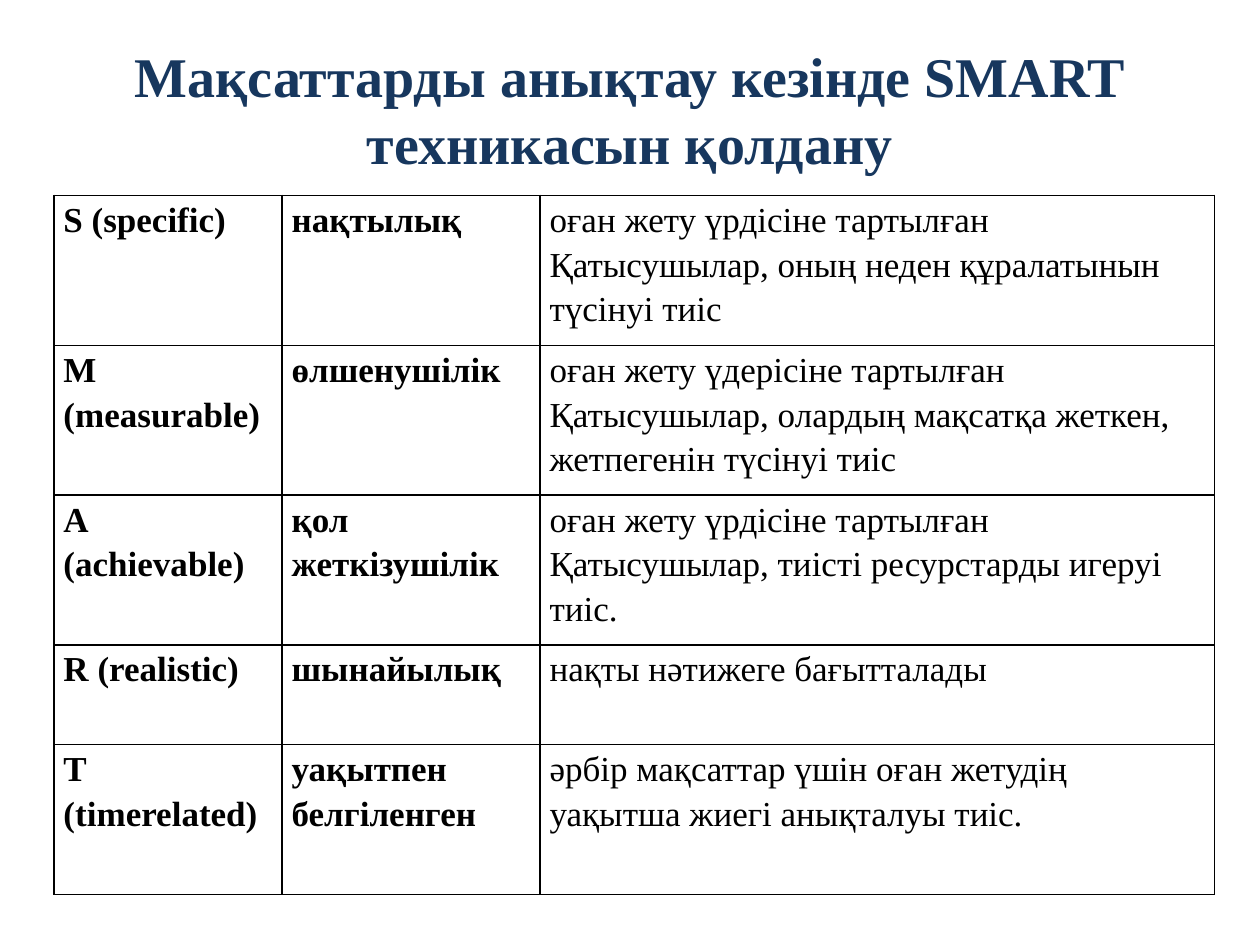
from pptx import Presentation
from pptx.dml.color import RGBColor
from pptx.enum.text import MSO_ANCHOR as Anchor, PP_ALIGN as Align
from pptx.oxml import parse_xml
from pptx.oxml.ns import nsdecls
from pptx.util import Cm, Pt

TITLE = "Мақсаттарды анықтау кезінде SMART техникасын қолдану"
ROWS = [
    ("S (specific)", "нақтылық",
     "оған жету үрдісіне тартылған Қатысушылар, оның неден құралатынын түсінуі тиіс"),
    ("M (measurable)", "өлшенушілік",
     "оған жету үдерісіне тартылған Қатысушылар, олардың мақсатқа жеткен, жетпегенін түсінуі тиіс"),
    ("A (achievable)", "қол жеткізушілік",
     "оған жету үрдісіне тартылған Қатысушылар, тиісті ресурстарды игеруі тиіс."),
    ("R (realistic)", "шынайылық", "нақты нәтижеге бағытталады"),
    ("T (timerelated)", "уақытпен белгіленген",
     "әрбір мақсаттар үшін оған жетудің уақытша жиегі анықталуы тиіс."),
]
COLUMN_WIDTHS = [4.6, 5.2, 13.59]
ROW_HEIGHTS = [3.02, 3.02, 3.02, 2.01, 3.02]


def color(hex_text):
    return RGBColor.from_string(hex_text)


def set_all(target, values):
    for name, value in values.items():
        setattr(target, name, value)


class SlideBuilder:
    font_name = "Times New Roman"
    title_color = "17375E"
    text_color = "000000"
    border_width = Pt(1)
    cell_format = {"margin_left": Cm(0.19), "margin_right": Cm(0.19),
                   "margin_top": 0, "margin_bottom": 0,
                   "vertical_anchor": Anchor.TOP}

    def __init__(self, deck):
        self.page = deck.slides.add_slide(deck.slide_layouts.get_by_name("Title Only"))

    def add_text(self, para, text, size, hex_text, bold, **para_format):
        span = para.add_run()
        span.text = text
        set_all(span.font, {"name": self.font_name, "size": Pt(size), "bold": bold})
        span.font.color.rgb = color(hex_text)
        set_all(para, para_format)

    def title(self, text, left, top, width, height):
        box = self.page.shapes.title
        set_all(box, {"left": Cm(left), "top": Cm(top),
                      "width": Cm(width), "height": Cm(height)})
        set_all(box.text_frame, {"vertical_anchor": Anchor.TOP, "word_wrap": True})
        self.add_text(box.text_frame.paragraphs[0], text, 32, self.title_color, True,
                      alignment=Align.CENTER, space_before=Pt(6.4))

    def border(self, cell):
        """Draw a solid line on all four sides of the cell."""
        properties = cell._tc.get_or_add_tcPr()
        for position, side in enumerate(("lnL", "lnR", "lnT", "lnB")):
            properties.insert(position, parse_xml(
                f'<a:{side} {nsdecls("a")} w="{self.border_width}"><a:solidFill>'
                f'<a:srgbClr val="{self.text_color}"/></a:solidFill></a:{side}>'))

    def table(self, rows, left, top, widths, heights):
        table = self.page.shapes.add_table(
            len(rows), len(widths), Cm(left), Cm(top),
            Cm(sum(widths)), Cm(sum(heights))).table
        set_all(table, {"first_row": False, "horz_banding": False})
        for column, width in zip(table.columns, widths):
            column.width = Cm(width)
        for row, height, texts in zip(table.rows, heights, rows):
            row.height = Cm(height)
            for index, (cell, text) in enumerate(zip(row.cells, texts)):
                set_all(cell, self.cell_format)
                cell.fill.background()
                self.border(cell)
                self.add_text(cell.text_frame.paragraphs[0], text, 20,
                              self.text_color, index < 2, line_spacing=1.15)


def main():
    deck = Presentation()
    set_all(deck, {"slide_width": Cm(25.4), "slide_height": Cm(19.05)})
    builder = SlideBuilder(deck)
    builder.title(TITLE, 1.27, 0.71, 22.86, 3.2)
    builder.table(ROWS, 1.09, 3.94, COLUMN_WIDTHS, ROW_HEIGHTS)
    deck.save("out.pptx")


if __name__ == "__main__":
    main()
